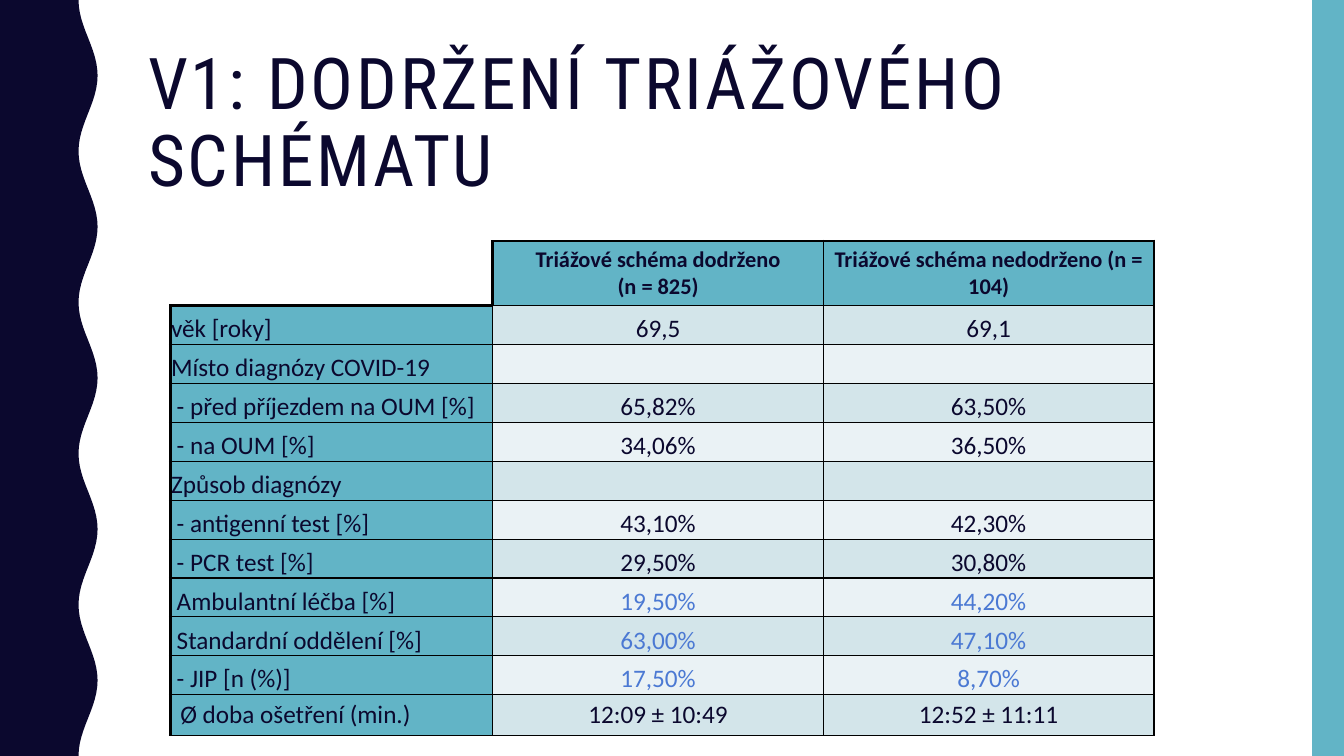
import math
from lxml import etree
from pptx import Presentation
from pptx import util as u
from pptx.dml.color import RGBColor
from pptx.enum import shapes, text
from pptx.oxml import ns

HUES = {"navy": "0B082E", "teal": "62B4C6", "blue": "4B79D3", "black": "000000",
        "white": "FFFFFF", "odd": "D3E5EA", "even": "EAF2F5"}
HEADS = [["Triážové schéma dodrženo", "(n = 825)"],
         ["Triážové schéma nedodrženo (n = 104)"]]
ROWS = [
    ("věk [roky]", "69,5", "69,1"),
    ("Místo diagnózy COVID-19", "", ""),
    (" - před příjezdem na OUM [%]", "65,82%", "63,50%"),
    (" - na OUM [%]", "34,06%", "36,50%"),
    ("Způsob diagnózy", "", ""),
    (" - antigenní test [%]", "43,10%", "42,30%"),
    (" - PCR test [%]", "29,50%", "30,80%"),
    (" Ambulantní léčba [%]", "19,50%", "44,20%"),
    (" Standardní oddělení [%]", "63,00%", "47,10%"),
    (" - JIP [n (%)]", "17,50%", "8,70%"),
    ("Ø doba ošetření (min.)", "12:09 ± 10:49", "12:52 ± 11:11"),
]
BLUE_ROWS = (8, 9, 10)
LAST = len(ROWS)


def paint(shape, hue):
    shape.fill.solid()
    shape.fill.fore_color.rgb = RGBColor.from_string(HUES[hue])
    shape.line.fill.background()
    shape.shadow.inherit = False


def style(cell, hue, edges):
    """Fill a cell and draw its edges, given as side: (hue, points)."""
    cell.fill.solid()
    cell.fill.fore_color.rgb = RGBColor.from_string(HUES[hue])
    props = cell._tc.get_or_add_tcPr()
    for spot, side in enumerate("LRTB"):
        tint, width = edges[side]
        line = etree.Element(ns.qn(f"a:ln{side}"), w=str(u.Pt(width)))
        fill = etree.SubElement(line, ns.qn("a:solidFill"))
        etree.SubElement(fill, ns.qn("a:srgbClr"), val=HUES[tint])
        props.insert(spot, line)


deck = Presentation()
deck.slide_width, deck.slide_height = u.Cm(33.87), u.Cm(19.05)
slide = deck.slides.add_slide(deck.slide_layouts[5])

# Wavy left band: five full waves down the slide
wave, steps = 3.81, 24
points = []
for step in range(5 * steps + 1):
    turn = step / steps
    edge = 2.22 - 0.24 * math.cos(2 * math.pi * turn)
    points.append((u.Cm(edge), u.Cm(wave * turn)))
pen = slide.shapes.build_freeform(0, 0)
pen.add_line_segments(points + [(0, u.Cm(19.05))], close=True)
paint(pen.convert_to_shape(), "navy")

stripe = slide.shapes.add_shape(shapes.MSO_SHAPE.RECTANGLE,
                                u.Cm(33.07), 0, u.Cm(0.8), u.Cm(19.05))
paint(stripe, "teal")

title = slide.shapes.title
title.left, title.top, title.width, title.height = map(u.Cm, (3.48, 1.07, 28.27, 4.14))
frame = title.text_frame
frame.word_wrap = True
frame.auto_size = text.MSO_AUTO_SIZE.NONE
frame.vertical_anchor = text.MSO_ANCHOR.MIDDLE
para = frame.paragraphs[0]
para.alignment = text.PP_ALIGN.LEFT
para.line_spacing = 0.9
run = para.add_run()
run.text = "V1: DODRŽENÍ TRIÁŽOVÉHO SCHÉMATU"
run.font.name, run.font.size = "Roboto Condensed", u.Pt(51)
run.font.color.rgb = RGBColor.from_string(HUES["navy"])
run.font._element.set("spc", "200")

table = slide.shapes.add_table(LAST + 1, 3, u.Cm(4.29), u.Cm(6.07),
                               u.Cm(24.79), u.Cm(12.33)).table
table.first_row = table.horz_banding = False
for col, width in zip(table.columns, (8.13, 8.33, 8.33)):
    col.width = u.Cm(width)
for r, row in enumerate(table.rows):
    row.height = u.Cm(0.98 if r else 1.55)
    for c, cell in enumerate(row.cells):
        thin, thick, clear = ("black", 1), ("black", 2.25), ("white", 1)
        edges = {"L": thick if c == 0 or (r, c) == (0, 1) else thin,
                 "R": thick if c == 2 else thin,
                 "T": thick if r == 0 or (r, c) == (1, 0) else thin,
                 "B": thin}
        if r == c == 0:
            style(cell, "white", {"L": clear, "R": thick, "T": clear, "B": thick})
            continue
        band = "odd" if r % 2 else "even"
        style(cell, "teal" if r == 0 or c == 0 else band, edges)

        if r in (0, LAST):
            cell.vertical_anchor = text.MSO_ANCHOR.MIDDLE
        else:
            cell.vertical_anchor = text.MSO_ANCHOR.BOTTOM
            cell.margin_left = cell.margin_right = cell.margin_top = u.Cm(0.02)
            cell.margin_bottom = 0
        para = cell.text_frame.paragraphs[0]
        para.alignment = text.PP_ALIGN.CENTER if c else text.PP_ALIGN.LEFT
        lines = [ROWS[r - 1][c]] if r else HEADS[c - 1]
        for n, words in enumerate(lines):
            if n:
                para.add_line_break()
            if not words:
                continue
            run = para.add_run()
            run.text = words
            run.font.name, run.font.size = "Calibri", u.Pt(18 if r else 16)
            run.font.bold = r == 0
            ink = "blue" if c and r in BLUE_ROWS else "navy"
            run.font.color.rgb = RGBColor.from_string(HUES[ink])

deck.save("out.pptx")
